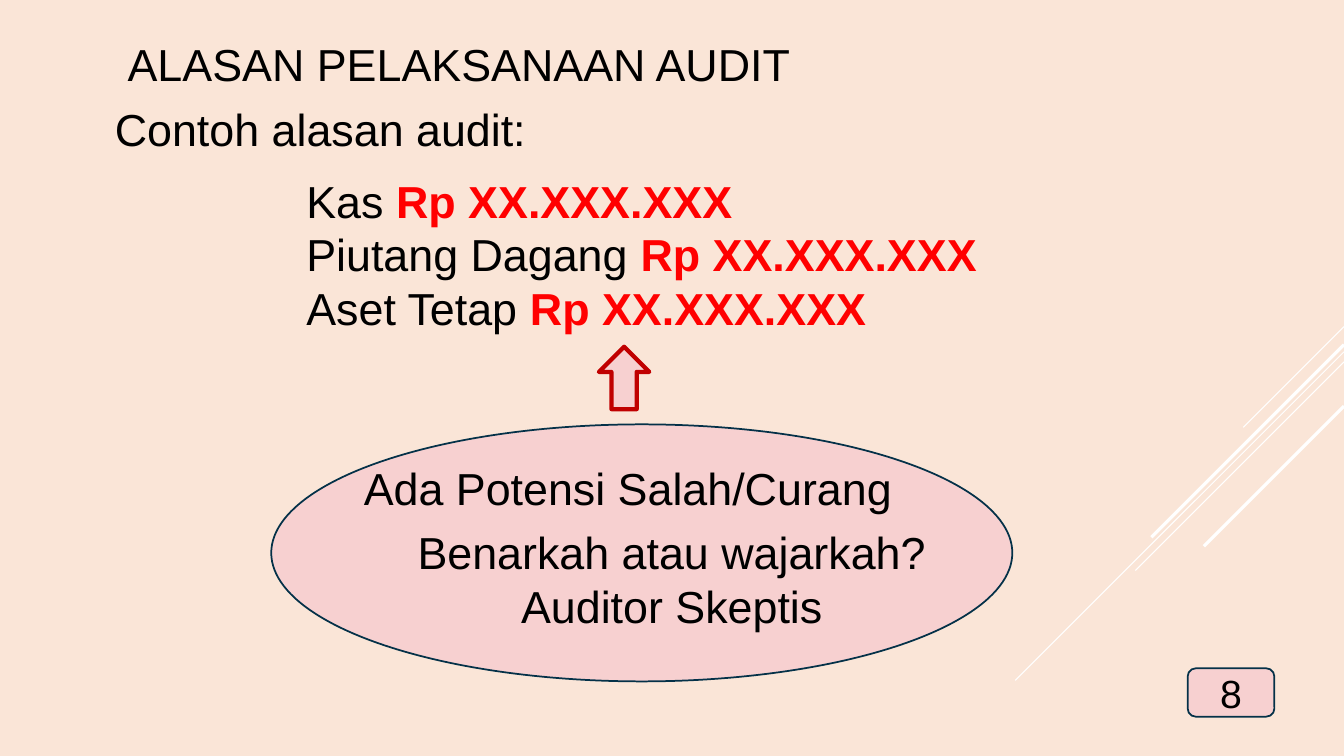
"""Build the audit reasons slide."""
import pptx
import pptx.util
import pptx.dml.color
import pptx.enum.shapes
import pptx.enum.text
import lxml.etree

Inches, Pt = pptx.util.Inches, pptx.util.Pt
KIND = pptx.enum.shapes.MSO_SHAPE
ALIGN = pptx.enum.text.PP_ALIGN
HUES = {"back": "FAE5D7", "pink": "F7D0D0", "navy": "043148",
        "red": "FF0000", "dark": "C00000", "black": "000000", "white": "FFFFFF"}
SUM = "Rp XX.XXX.XXX"
ITEMS = ["Kas ", "Piutang Dagang ", "Aset Tetap "]
RAYS = [(3.24, 1.0, 0.75), (3.49, 3.26, 0.75), (3.59, 2.07, 0.75),
        (3.42, 1.91, 2.25), (4.03, 1.39, 2.25)]
SHAPES = {
    "page": (KIND.ROUNDED_RECTANGLE, (11.78, 6.63, 0.86, 0.48), "navy", 1.25, 0),
    "oval": (KIND.OVAL, (2.69, 4.21, 7.35, 2.55), "navy", 1.25, 0),
    "arrow": (KIND.RIGHT_ARROW, (5.88, 3.5, 0.62, 0.5), "dark", 3, 270),
}
TEXTS = [
    ((0.76, 0.32, 7.59, 0.64), ALIGN.CENTER, True, [["ALASAN PELAKSANAAN AUDIT"]]),
    ((1.04, 0.96, 4.31, 0.64), ALIGN.LEFT, False, [["Contoh alasan audit:"]]),
    ((2.94, 1.67, 7.26, 1.72), ALIGN.LEFT, True, [[item, SUM] for item in ITEMS]),
    ((3.6, 5.16, 6.13, 1.18), ALIGN.CENTER, True,
     [["Benarkah atau wajarkah?"], ["Auditor Skeptis"]]),
    ((3.51, 4.52, 5.48, 0.64), ALIGN.LEFT, False, [["Ada Potensi Salah/Curang"]]),
]


def hue(name):
    """Return the named colour."""
    return pptx.dml.color.RGBColor.from_string(HUES[name])


def paint(fill, name):
    """Give a fill one solid colour."""
    fill.solid()
    fill.fore_color.rgb = hue(name)


def style(thing, form):
    """Set attributes from a dict."""
    for key, value in form.items():
        setattr(thing, key, value)


def write(frame, lines, size, align):
    """Fill a text frame with lines of runs."""
    for num, line in enumerate(lines):
        para = frame.add_paragraph() if num else frame.paragraphs[0]
        para.alignment = align
        for part in line:
            run = para.add_run()
            run.text = part
            style(run.font, {"name": "Arial", "size": Pt(size), "bold": part == SUM})
            run.font.color.rgb = hue("red" if part == SUM else "black")


def add_ray(slide, top, span, width):
    """Draw a diagonal from the right edge down to the left."""
    ends = (13.33, top, 13.33 - span, top + span)
    ray = slide.shapes.add_connector(
        pptx.enum.shapes.MSO_CONNECTOR.STRAIGHT, *map(Inches, ends))
    ray.line.color.rgb = hue("white")
    ray.line.width = Pt(width)
    lxml.etree.SubElement(ray.element.spPr, pptx.oxml.ns.qn("a:effectLst"))


def add_form(slide, kind, box, edge, width, turn):
    """Draw a pink preset shape."""
    form = slide.shapes.add_shape(kind, *map(Inches, box))
    form.shadow.inherit = False
    form.rotation = turn
    paint(form.fill, "pink")
    form.line.color.rgb = hue(edge)
    form.line.width = Pt(width)
    return form


def main():
    """Build and save the slide."""
    deck = pptx.Presentation()
    style(deck, {"slide_width": Inches(13.33), "slide_height": Inches(7.5)})
    slide = deck.slides.add_slide(deck.slide_layouts[6])
    paint(slide.background.fill, "back")
    for ray in RAYS:
        add_ray(slide, *ray)
    page = add_form(slide, *SHAPES["page"])
    page.text_frame.vertical_anchor = pptx.enum.text.MSO_ANCHOR.MIDDLE
    write(page.text_frame, [["8"]], 28, ALIGN.CENTER)
    add_form(slide, *SHAPES["oval"])
    for box, align, wrap, lines in TEXTS:
        frame = slide.shapes.add_textbox(*map(Inches, box)).text_frame
        style(frame, {"word_wrap": wrap,
                      "auto_size": pptx.enum.text.MSO_AUTO_SIZE.SHAPE_TO_FIT_TEXT})
        write(frame, lines, 32, align)
    add_form(slide, *SHAPES["arrow"])
    deck.save("out.pptx")


if __name__ == "__main__":
    main()
